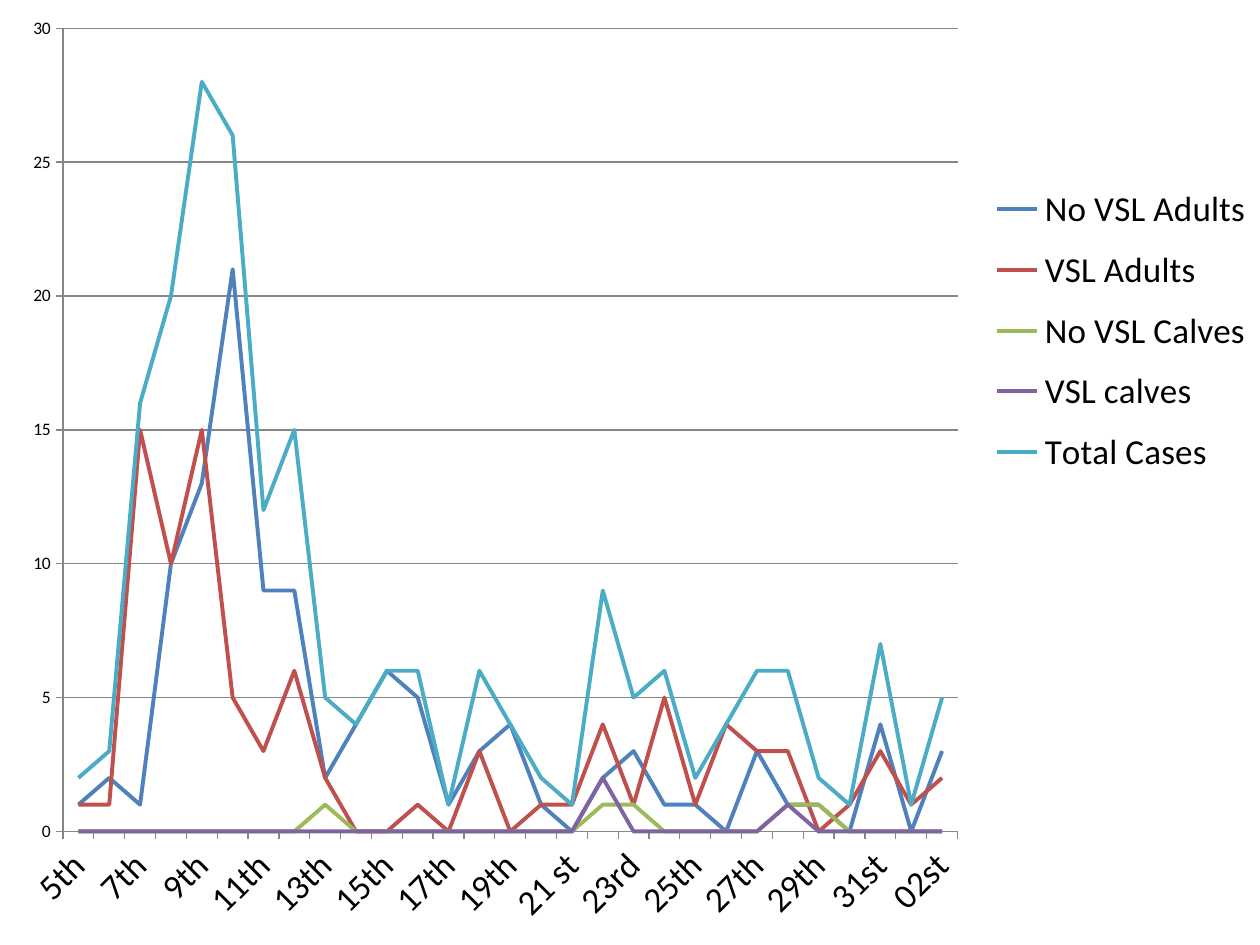
from lxml import etree
from pptx import Presentation
from pptx.chart.data import CategoryChartData
from pptx.dml.color import RGBColor
from pptx.enum.chart import XL_CHART_TYPE, XL_LEGEND_POSITION, XL_MARKER_STYLE, XL_TICK_MARK
from pptx.oxml.ns import qn
from pptx.util import Inches, Pt

LINE = XL_CHART_TYPE.LINE
RIGHT = XL_LEGEND_POSITION.RIGHT
NO_MARKER = XL_MARKER_STYLE.NONE
OUTSIDE = XL_TICK_MARK.OUTSIDE
NO_TICK = XL_TICK_MARK.NONE

FONT = "Calibri"
COLORS = {
    "background": "FFFFFF",
    "text": "000000",
    "axis": "868686",
    "No VSL Adults": "4F81BD",
    "VSL Adults": "C0504D",
    "No VSL Calves": "9BBB59",
    "VSL calves": "8064A2",
    "Total Cases": "4BACC6",
}
DAYS = [
    "5th", "6th", "7th", "8th", "9th", "10th ", "11th", "12th", "13th", "14th",
    "15th", "16th", "17th", "18th", "19th", "20th", "21 st", "22nd", "23rd", "24th",
    "25th", "26th", "27th", "28th", "29th", "30th", "31st", "01st", "02st",
]
CASES = {
    "No VSL Adults": [1, 2, 1, 10, 13, 21, 9, 9, 2, 4, 6, 5, 1, 3, 4,
                      1, 0, 2, 3, 1, 1, 0, 3, 1, 1, 0, 4, 0, 3],
    "VSL Adults": [1, 1, 15, 10, 15, 5, 3, 6, 2, 0, 0, 1, 0, 3, 0,
                   1, 1, 4, 1, 5, 1, 4, 3, 3, 0, 1, 3, 1, 2],
    "No VSL Calves": [0, 0, 0, 0, 0, 0, 0, 0, 1, 0, 0, 0, 0, 0, 0,
                      0, 0, 1, 1, 0, 0, 0, 0, 1, 1, 0, 0, 0, 0],
    "VSL calves": [0, 0, 0, 0, 0, 0, 0, 0, 0, 0, 0, 0, 0, 0, 0,
                   0, 0, 2, 0, 0, 0, 0, 0, 1, 0, 0, 0, 0, 0],
    "Total Cases": [2, 3, 16, 20, 28, 26, 12, 15, 5, 4, 6, 6, 1, 6, 4,
                    2, 1, 9, 5, 6, 2, 4, 6, 6, 2, 1, 7, 1, 5],
}
PLOT_BOX = (0.05, 0.03, 0.71, 0.85)
LEGEND_BOX = (0.78, 0.18, 0.22, 0.34)


def color(name):
    return RGBColor.from_string(COLORS[name])


def style_font(font, size):
    font.name = FONT
    font.size = Pt(size)
    font.color.rgb = color("text")


def style_line(line, name, width):
    line.color.rgb = color(name)
    line.width = Pt(width)


def set_layout(parent, position, box, inner=False):
    for old in parent.findall(qn("c:layout")):
        parent.remove(old)
    layout = etree.Element(qn("c:layout"))
    manual = etree.SubElement(layout, qn("c:manualLayout"))
    settings = [("layoutTarget", "inner")] if inner else []
    settings += [("xMode", "edge"), ("yMode", "edge")]
    settings += zip("xywh", map(str, box))
    for tag, value in settings:
        etree.SubElement(manual, qn(f"c:{tag}")).set("val", value)
    parent.insert(position, layout)


def style_axes(chart):
    for axis, size in ((chart.category_axis, 20), (chart.value_axis, 10)):
        style_font(axis.tick_labels.font, size)
        style_line(axis.format.line, "axis", 0.75)
        axis.major_tick_mark = OUTSIDE
        axis.minor_tick_mark = NO_TICK
    value_axis = chart.value_axis
    value_axis.minimum_scale, value_axis.maximum_scale = 0, 30
    value_axis.major_unit = 5
    value_axis.has_major_gridlines = True
    style_line(value_axis.major_gridlines.format.line, "axis", 0.75)

    category_element = chart.element.find(".//" + qn("c:catAx"))
    category_element.find(qn("c:txPr")).find(qn("a:bodyPr")).set("rot", "-2700000")
    skip = etree.Element(qn("c:tickLblSkip"))
    skip.set("val", "2")
    category_element.find(qn("c:noMultiLvlLbl")).addprevious(skip)


def style_series(chart):
    for series in chart.plots[0].series:
        style_line(series.format.line, series.name, 2.25)
        series.marker.style = NO_MARKER
        series.smooth = False


def style_legend(chart):
    chart.has_legend = True
    chart.legend.position = RIGHT
    chart.legend.include_in_layout = False
    style_font(chart.legend.font, 20)
    set_layout(chart.element.find(".//" + qn("c:legend")), 1, LEGEND_BOX)


def add_case_chart(slide, left, top, width, height):
    data = CategoryChartData()
    data.categories = DAYS
    for name, values in CASES.items():
        data.add_series(name, values)
    chart = slide.shapes.add_chart(LINE, left, top, width, height, data).chart
    chart.has_title = False
    style_font(chart.font, 10)
    chart.plots[0].vary_by_categories = False
    style_axes(chart)
    style_series(chart)
    style_legend(chart)
    set_layout(chart.element.find(".//" + qn("c:plotArea")), 0, PLOT_BOX, inner=True)


def main():
    presentation = Presentation()
    presentation.slide_width = Inches(10)
    presentation.slide_height = Inches(7.5)
    slide = presentation.slides.add_slide(presentation.slide_layouts[6])
    slide.background.fill.solid()
    slide.background.fill.fore_color.rgb = color("background")
    add_case_chart(slide, 0, 0, presentation.slide_width, presentation.slide_height)
    presentation.save("out.pptx")


if __name__ == "__main__":
    main()
